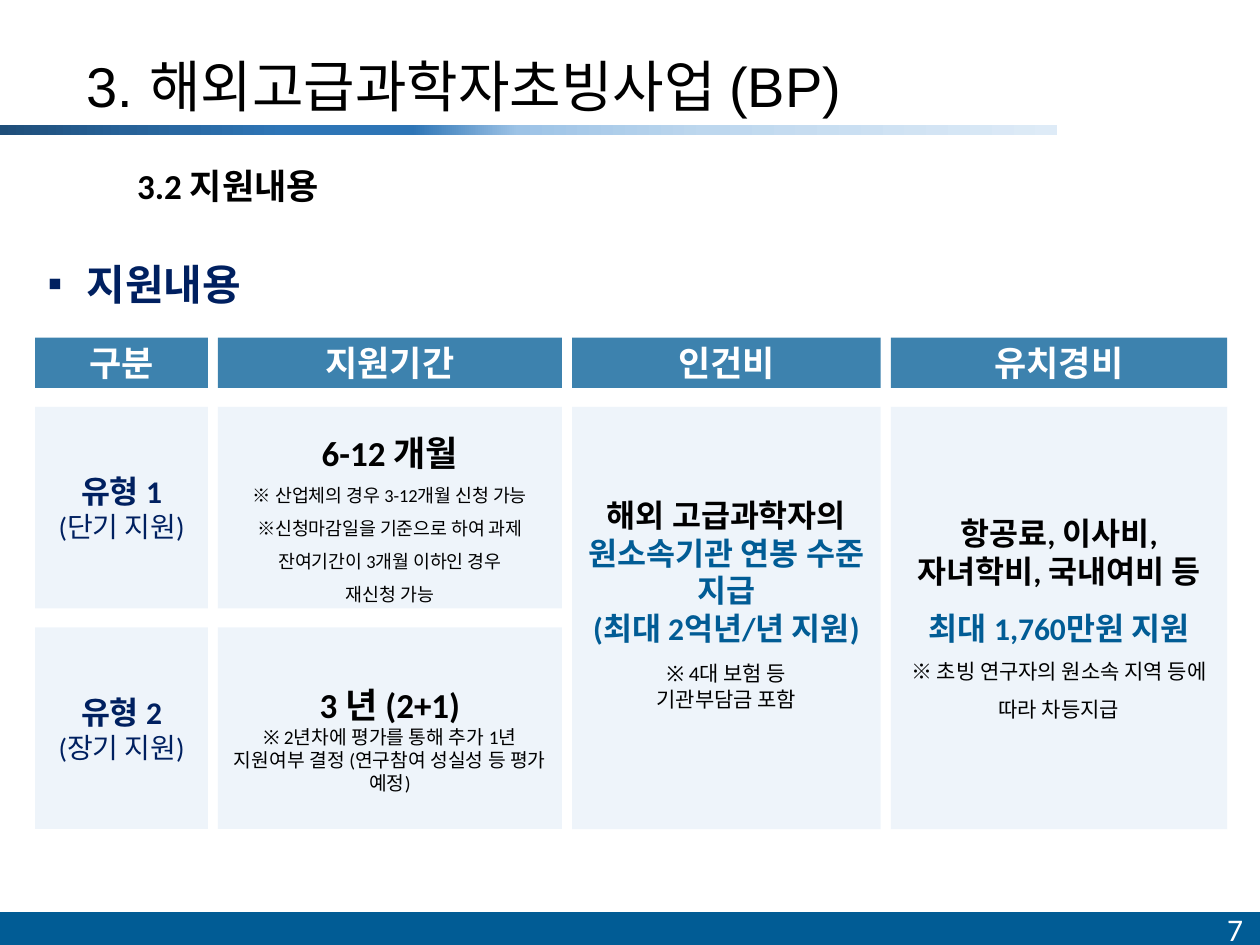
from lxml.etree import SubElement
from pptx import Presentation
from pptx.dml.color import RGBColor
from pptx.enum.shapes import MSO_SHAPE
from pptx.enum.text import MSO_ANCHOR, PP_ALIGN
from pptx.oxml.ns import qn
from pptx.util import Inches, Pt

BLACK, WHITE, NAVY, BLUE, PALE = "000000", "FFFFFF", "002060", "015C95", "DEEBF7"
GRADIENT = [(0, "1F4E79"), (12, "276298"), (27, "2E75B6"), (39, "2E75B6"),
            (49, "9DC3E6"), (67, "BDD7EE"), (100, PALE)]

LEFT, TOP = 0.28, 2.68
COL_WIDTHS, COL_GAP = [1.37, 2.73, 2.45, 2.67], 0.08
ROW_HEIGHTS, ROW_GAP = [0.4, 1.6, 1.6], 0.15

HEADERS = ["구분", "지원기간", "인건비", "유치경비"]


def rgb(color):
    return RGBColor.from_string(color)


def run(text, size, color=BLACK, bold=False, font="Calibri"):
    return text, size, color, bold, font


def para(*runs, spacing=None, before=None):
    return runs, spacing, before


def offset(sizes, gap, index):
    return sum(sizes[:index]) + gap * index


def cell_box(col, row, row_span=1):
    """Left, top, width and height of a grid cell in inches."""
    last = row + row_span
    height = sum(ROW_HEIGHTS[row:last]) + ROW_GAP * (row_span - 1)
    return (LEFT + offset(COL_WIDTHS, COL_GAP, col),
            TOP + offset(ROW_HEIGHTS, ROW_GAP, row), COL_WIDTHS[col], height)


def write(tf, paras, align=PP_ALIGN.LEFT):
    for i, (runs, spacing, before) in enumerate(paras):
        p = tf.paragraphs[0] if i == 0 else tf.add_paragraph()
        p.alignment = align
        if spacing:
            p.line_spacing = spacing
        if before:
            p.space_before = Pt(before)
        for text, size, color, bold, font in runs:
            r = p.add_run()
            r.text = text
            r.font.size = Pt(size)
            r.font.bold = bold
            r.font.name = font
            r.font.color.rgb = rgb(color)


def add_rect(s, box, color, alpha=100):
    sp = s.shapes.add_shape(MSO_SHAPE.RECTANGLE, *map(Inches, box))
    sp.shadow.inherit = False
    sp.line.fill.background()
    sp.fill.solid()
    sp.fill.fore_color.rgb = rgb(color)
    if alpha < 100:
        clr = sp.fill._xPr.find(".//" + qn("a:srgbClr"))
        SubElement(clr, qn("a:alpha"), val=str(alpha * 1000))
    return sp


def add_gradient_bar(s, box, stops):
    sp = add_rect(s, box, PALE)
    sp.fill.gradient()
    sp.fill.gradient_angle = 0
    gs_lst = sp.fill._xPr.find(".//" + qn("a:gsLst"))
    for gs in list(gs_lst):
        gs_lst.remove(gs)
    for pos, color in stops:
        gs = SubElement(gs_lst, qn("a:gs"), pos=str(pos * 1000))
        SubElement(gs, qn("a:srgbClr"), val=color)


def add_text(s, box, r, anchor=MSO_ANCHOR.TOP, spacing=None, wrap=True):
    tf = s.shapes.add_textbox(*map(Inches, box)).text_frame
    tf.word_wrap = wrap
    tf.vertical_anchor = anchor
    write(tf, [para(r, spacing=spacing)])
    return tf


def add_bullet(p, char, indent):
    pPr = p._p.get_or_add_pPr()
    pPr.set("marL", str(Inches(indent)))
    pPr.set("indent", str(-Inches(indent)))
    SubElement(pPr, qn("a:buFont"), typeface="Arial")
    SubElement(pPr, qn("a:buChar"), char=char)


def add_cell(s, box, color, alpha, paras, bottom=0.05):
    tf = add_rect(s, box, color, alpha).text_frame
    tf.word_wrap = True
    tf.vertical_anchor = MSO_ANCHOR.MIDDLE
    tf.margin_bottom = Inches(bottom)
    write(tf, paras, PP_ALIGN.CENTER)


def add_body(s, col, row, paras, row_span=1, bottom=0.05):
    add_cell(s, cell_box(col, row, row_span), PALE, 50, paras, bottom)


def add_grid(s):
    for col, header in enumerate(HEADERS):
        add_cell(s, cell_box(col, 0), BLUE, 76, [para(run(header, 20, WHITE, True))])
    for row, term in enumerate(["단기", "장기"], start=1):
        add_body(s, 0, row, [para(run(f"유형 {row}", 18, NAVY, True)),
                             para(run(f"({term} 지원)", 16, NAVY))])
    short_notes = ["※ 산업체의 경우 3-12개월 신청 가능",
                   "※신청마감일을 기준으로 하여 과제 잔여기간이 3개월 이하인 경우",
                   "재신청 가능"]
    add_body(s, 1, 1, [para(run("6-12 개월", 20, bold=True), spacing=1.5)]
             + [para(run(note, 10.5), spacing=1.5) for note in short_notes])
    add_body(s, 1, 2, [
        para(run("3 년 (2+1)", 20, bold=True), spacing=1.5),
        para(run("※ 2년차에 평가를 통해 추가 1년 지원여부 결정 "
                 "(연구참여 성실성 등 평가 예정)", 11))])
    add_body(s, 2, 1, [
        para(run("해외 고급과학자의 ", 18, bold=True),
             run("원소속기관 연봉 수준 지급", 18, BLUE, True)),
        para(run("(최대 2억년/년 지원)", 18, BLUE, True)),
        para(run("※ 4대 보험 등", 12), before=8),
        para(run("기관부담금 포함", 12))], row_span=2, bottom=0.28)
    add_body(s, 3, 1, [
        para(run("항공료, 이사비, 자녀학비, 국내여비 등", 18, bold=True)),
        para(run("최대 1,760만원 지원", 18, BLUE, True), spacing=1.5),
        para(run("※ 초빙 연구자의 원소속 지역 등에 따라 차등지급", 12),
             spacing=1.5)], row_span=2)


def main():
    prs = Presentation()
    prs.slide_width, prs.slide_height = Inches(10), Inches(7.5)
    s = prs.slides.add_slide(prs.slide_layouts[6])

    add_rect(s, (0, 7.24, 10, 0.26), BLUE)
    add_text(s, (0.59, 0.21, 8.5, 0.79),
             run("3. 해외고급과학자초빙사업 (BP)", 32, font="Arial"),
             MSO_ANCHOR.BOTTOM, spacing=0.9)
    add_gradient_bar(s, (0, 0.99, 8.39, 0.08), GRADIENT)
    add_text(s, (9.64, 7.17, 0.36, 0.33), run("7", 18, WHITE), wrap=False)
    add_text(s, (0.99, 1.26, 5.2, 0.44), run("3.2 지원내용", 20, bold=True))
    tf = add_text(s, (LEFT, 2, 2.71, 0.5), run("지원내용", 24, NAVY, True))
    add_bullet(tf.paragraphs[0], "▪", 0.31)
    add_grid(s)

    prs.save("out.pptx")


if __name__ == "__main__":
    main()
